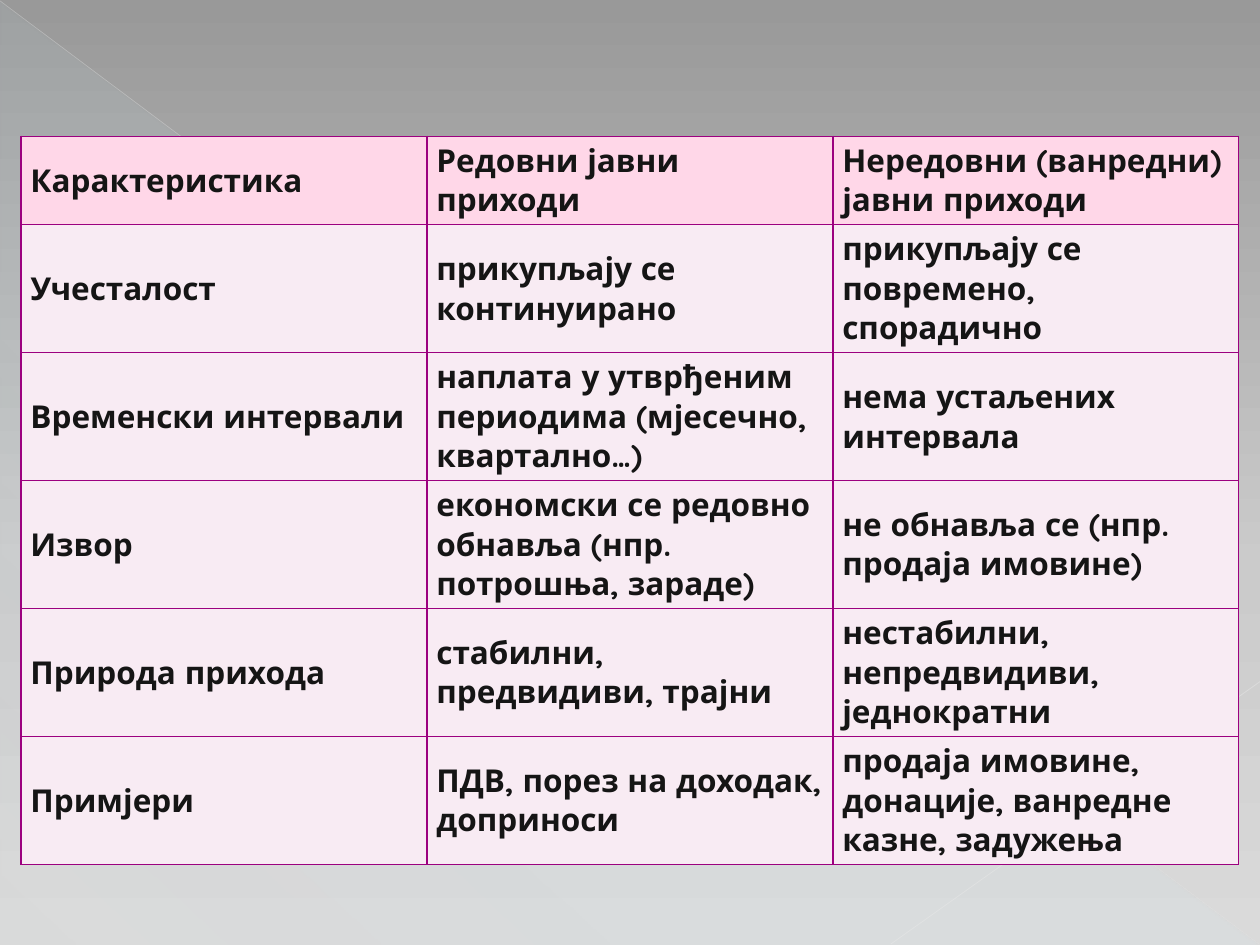
from lxml import etree
from pptx import Presentation
from pptx.dml.color import RGBColor
from pptx.enum.shapes import MSO_CONNECTOR, MSO_SHAPE
from pptx.enum.text import MSO_ANCHOR
from pptx.oxml.ns import qn
from pptx.util import Pt

STRAIGHT = MSO_CONNECTOR.STRAIGHT
RIGHT_TRIANGLE = MSO_SHAPE.RIGHT_TRIANGLE
MIDDLE = MSO_ANCHOR.MIDDLE

FONT = "Quicksand"
COLORS = {
    "text": "151515",
    "header": "FFD7E8",
    "body": "F8EBF3",
    "border": "9C007F",
    "glow": "D0F1FE",
    "diagonal": "E8E8E8",
    "corner": "EAEAEA",
    "bg_top": "999999",
    "bg_middle": "CBCBCB",
    "bg_bottom": "DADADA",
}

COLUMN_WIDTH = 232
ROW_HEIGHTS = [44, 44, 57.6, 57.6, 44, 44]
ROWS = [
    ("Карактеристика", "Редовни јавни приходи", "Нередовни (ванредни) јавни приходи"),
    ("Учесталост", "прикупљају се континуирано", "прикупљају се повремено, спорадично"),
    ("Временски интервали", "наплата у утврђеним периодима (мјесечно, квартално…)",
     "нема устаљених интервала"),
    ("Извор", "економски се редовно обнавља (нпр. потрошња, зараде)",
     "не обнавља се (нпр. продаја имовине)"),
    ("Природа прихода", "стабилни, предвидиви, трајни",
     "нестабилни, непредвидиви, једнократни"),
    ("Примјери", "ПДВ, порез на доходак, доприноси",
     "продаја имовине, донације, ванредне казне, задужења"),
]


def rgb(name):
    return RGBColor.from_string(COLORS[name])


def add_color(parent, name, opacity=100):
    color = etree.SubElement(parent, qn("a:srgbClr"), val=COLORS[name])
    if opacity < 100:
        etree.SubElement(color, qn("a:alpha"), val=str(opacity * 1000))


def set_gradient(fill, owner, stops, angle):
    """Fill with (position, colour, opacity) stops; the angle runs clockwise."""
    fill.gradient()
    gradient = owner.find(".//" + qn("a:gradFill"))
    for child in list(gradient):
        gradient.remove(child)
    stop_list = etree.SubElement(gradient, qn("a:gsLst"))
    for position, name, opacity in stops:
        stop = etree.SubElement(stop_list, qn("a:gs"), pos=str(position * 1000))
        add_color(stop, name, opacity)
    etree.SubElement(gradient, qn("a:lin"), ang=str(angle * 60000), scaled="0")


def add_glow(slide):
    glow = slide.shapes.add_shape(RIGHT_TRIANGLE, Pt(0.5), Pt(1), Pt(719), Pt(539))
    glow.shadow.inherit = False
    glow.line.fill.background()
    stops = [(0, "glow", 10), (70, "glow", 8), (100, "glow", 1)]
    set_gradient(glow.fill, glow.element, stops, 133)


def add_thin_line(slide, start, end, name, width, opacity):
    points = [Pt(value) for value in (*start, *end)]
    thin_line = slide.shapes.add_connector(STRAIGHT, *points)
    thin_line.line.width = Pt(width)
    thin_line.line.color.rgb = rgb(name)
    color = thin_line.element.spPr.find(".//" + qn("a:srgbClr"))
    etree.SubElement(color, qn("a:alpha"), val=str(opacity * 1000))
    etree.SubElement(thin_line.element.spPr, qn("a:effectLst"))


def set_borders(cell):
    properties = cell._tc.get_or_add_tcPr()
    # Borders come before the fill in the cell properties
    for index, side in enumerate(("lnL", "lnR", "lnT", "lnB")):
        border = etree.Element(qn("a:" + side), w=str(Pt(0.75)))
        add_color(etree.SubElement(border, qn("a:solidFill")), "border")
        properties.insert(index, border)


def fill_cell(cell, text, fill_name):
    cell.fill.solid()
    cell.fill.fore_color.rgb = rgb(fill_name)
    cell.vertical_anchor = MIDDLE
    cell.margin_left = cell.margin_right = Pt(5.4)
    cell.margin_top = cell.margin_bottom = Pt(2.7)
    run = cell.text_frame.paragraphs[0].add_run()
    run.text = text
    run.font.name = FONT
    run.font.size = Pt(18)
    run.font.bold = True
    run.font.color.rgb = rgb("text")
    set_borders(cell)


def add_comparison(slide):
    frame = slide.shapes.add_table(len(ROWS), len(ROWS[0]), Pt(12), Pt(77.8),
                                   Pt(COLUMN_WIDTH * 3), Pt(399.6))
    comparison = frame.table
    for column in comparison.columns:
        column.width = Pt(COLUMN_WIDTH)
    for row_index, (texts, height) in enumerate(zip(ROWS, ROW_HEIGHTS)):
        comparison.rows[row_index].height = Pt(height)
        fill_name = "body" if row_index else "header"
        for column_index, text in enumerate(texts):
            fill_cell(comparison.cell(row_index, column_index), text, fill_name)
    # Rows grow with their text, so the frame is taller than their sum
    frame.height = Pt(399.6)


def main():
    presentation = Presentation()
    presentation.slide_width, presentation.slide_height = Pt(720), Pt(540)
    slide = presentation.slides.add_slide(presentation.slide_layouts[6])

    # Backdrop
    stops = [(0, "bg_top", 100), (60, "bg_middle", 100), (100, "bg_bottom", 100)]
    set_gradient(slide.background.fill, slide.element, stops, 90)
    add_glow(slide)
    add_thin_line(slide, (0, 0.5), (719.5, 539.5), "diagonal", 0.39, 35)
    add_thin_line(slide, (720, 389.5), (509, 539.5), "corner", 0.47, 45)

    # Regular and irregular revenue compared
    add_comparison(slide)
    presentation.save("out.pptx")


if __name__ == "__main__":
    main()
